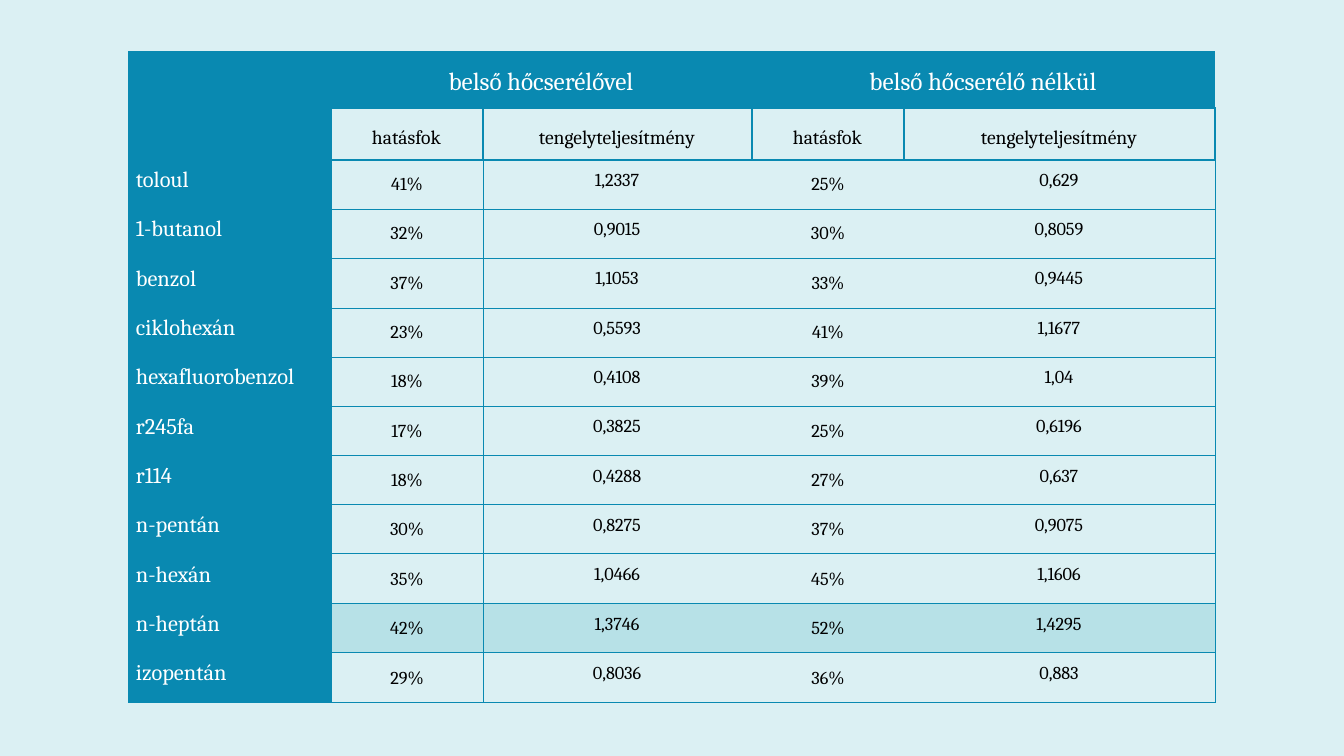
from dataclasses import dataclass

from lxml.etree import SubElement
from pptx import Presentation
from pptx.dml.color import RGBColor
from pptx.enum.text import MSO_ANCHOR as Anchor, PP_ALIGN as Align
from pptx.oxml.ns import qn
from pptx.table import Table, _Cell as Cell
from pptx.util import Pt

EMU_PER_PX = 12192000 / 1344
FONT = "Cambria"
COLORS = {"background": "DBF0F3", "teal": "0989B1", "highlight": "B7E1E7",
          "white": "FFFFFF", "black": "000000"}
NO_GRID_STYLE = "{2D5ABB26-0587-4C30-8999-92F81FD0307C}"

COLUMN_WIDTHS = [203, 152, 269, 152, 311]
HEADER_HEIGHTS = [57, 52]
BODY_HEIGHT = 543
LEFT, TOP = 128, 51


@dataclass(frozen=True)
class CellStyle:
    size: int
    color: str
    anchor: Anchor
    align: Align
    margins: tuple[int, int, int, int]  # left, top, right, bottom


@dataclass(frozen=True)
class Fluid:
    name: str
    values: tuple[str, str, str, str]
    highlighted: bool = False


GROUP = CellStyle(18, "white", Anchor.BOTTOM, Align.CENTER, (0, 2, 1, 11))
HEADING = CellStyle(14, "black", Anchor.BOTTOM, Align.CENTER, (0, 3, 1, 11))
NAME = CellStyle(16, "white", Anchor.MIDDLE, Align.LEFT, (8, 3, 1, 11))
PERCENT = CellStyle(13, "black", Anchor.MIDDLE, Align.CENTER, (1, 1, 1, 0))
POWER = CellStyle(13, "black", Anchor.MIDDLE, Align.CENTER, (0, 3, 1, 11))

GROUPS = ["belső hőcserélővel", "belső hőcserélő nélkül"]
HEADINGS = ["hatásfok", "tengelyteljesítmény"]
FLUIDS = [
    Fluid("toloul", ("41%", "1,2337", "25%", "0,629")),
    Fluid("1-butanol", ("32%", "0,9015", "30%", "0,8059")),
    Fluid("benzol", ("37%", "1,1053", "33%", "0,9445")),
    Fluid("ciklohexán", ("23%", "0,5593", "41%", "1,1677")),
    Fluid("hexafluorobenzol", ("18%", "0,4108", "39%", "1,04")),
    Fluid("r245fa", ("17%", "0,3825", "25%", "0,6196")),
    Fluid("r114", ("18%", "0,4288", "27%", "0,637")),
    Fluid("n-pentán", ("30%", "0,8275", "37%", "0,9075")),
    Fluid("n-hexán", ("35%", "1,0466", "45%", "1,1606")),
    Fluid("n-heptán", ("42%", "1,3746", "52%", "1,4295"), highlighted=True),
    Fluid("izopentán", ("29%", "0,8036", "36%", "0,883")),
]


def px(length: int) -> int:
    return round(length * EMU_PER_PX)


def rgb(name: str) -> RGBColor:
    return RGBColor.from_string(COLORS[name])


def write(cell: Cell, text: str, style: CellStyle) -> None:
    (cell.margin_left, cell.margin_top,
     cell.margin_right, cell.margin_bottom) = map(px, style.margins)
    cell.vertical_anchor = style.anchor
    paragraph = cell.text_frame.paragraphs[0]
    paragraph.alignment = style.align
    run = paragraph.add_run()
    run.text = text
    run.font.name = FONT
    run.font.size = Pt(style.size)
    run.font.color.rgb = rgb(style.color)


def set_borders(cell: Cell, widths: dict[str, float]) -> None:
    """Draw the sides given by L, R, T, B (in that order), widths in points."""
    properties = cell._tc.get_or_add_tcPr()
    for side, width in widths.items():
        line = SubElement(properties, qn(f"a:ln{side}"), w=str(Pt(width)))
        fill = SubElement(line, qn("a:solidFill"))
        SubElement(fill, qn("a:srgbClr"), val=COLORS["teal"])


def set_fill(cell: Cell, color: str | None) -> None:
    if color is None:
        cell.fill.background()
    else:
        cell.fill.solid()
        cell.fill.fore_color.rgb = rgb(color)


def fill_headers(table: Table) -> None:
    for column in range(len(COLUMN_WIDTHS)):
        set_fill(table.cell(0, column), "teal")
    set_fill(table.cell(1, 0), "teal")
    for index, group in enumerate(GROUPS):
        first = 1 + 2 * index
        table.cell(0, first).merge(table.cell(0, first + 1))
        write(table.cell(0, first), group, GROUP)
        for column, heading in enumerate(HEADINGS, first):
            cell = table.cell(1, column)
            write(cell, heading, HEADING)
            set_borders(cell, {"L": 1, "R": 1, "T": 1, "B": 1})
            set_fill(cell, None)


def fill_body(table: Table) -> None:
    for row, fluid in enumerate(FLUIDS, len(HEADER_HEIGHTS)):
        name_cell = table.cell(row, 0)
        write(name_cell, fluid.name, NAME)
        set_fill(name_cell, "teal")
        top = 1 if row == len(HEADER_HEIGHTS) else 0.5
        for column, value in enumerate(fluid.values, 1):
            cell = table.cell(row, column)
            write(cell, value, PERCENT if column % 2 else POWER)
            sides = {"L": 1} if column == 1 else {}
            if column in (1, 4):
                sides["R"] = 0.5
            set_borders(cell, sides | {"T": top, "B": 0.5})
            set_fill(cell, "highlight" if fluid.highlighted else None)


def main() -> None:
    presentation = Presentation()
    presentation.slide_width, presentation.slide_height = px(1344), px(756)
    slide = presentation.slides.add_slide(presentation.slide_layouts[6])
    slide.background.fill.solid()
    slide.background.fill.fore_color.rgb = rgb("background")

    # Table grid: the body height is shared evenly in whole px
    count = len(FLUIDS)
    edges = [BODY_HEIGHT * index // count for index in range(count + 1)]
    heights = HEADER_HEIGHTS + [low - high for high, low in zip(edges, edges[1:])]
    frame = slide.shapes.add_table(
        len(heights), len(COLUMN_WIDTHS), px(LEFT), px(TOP),
        px(sum(COLUMN_WIDTHS)), px(sum(heights)))
    table = frame.table
    table._tbl.tblPr.find(qn("a:tableStyleId")).text = NO_GRID_STYLE
    table.horz_banding = False
    for column, width in zip(table.columns, COLUMN_WIDTHS):
        column.width = px(width)
    for row, height in zip(table.rows, heights):
        row.height = px(height)

    # Table contents
    fill_headers(table)
    fill_body(table)
    presentation.save("out.pptx")


if __name__ == "__main__":
    main()
